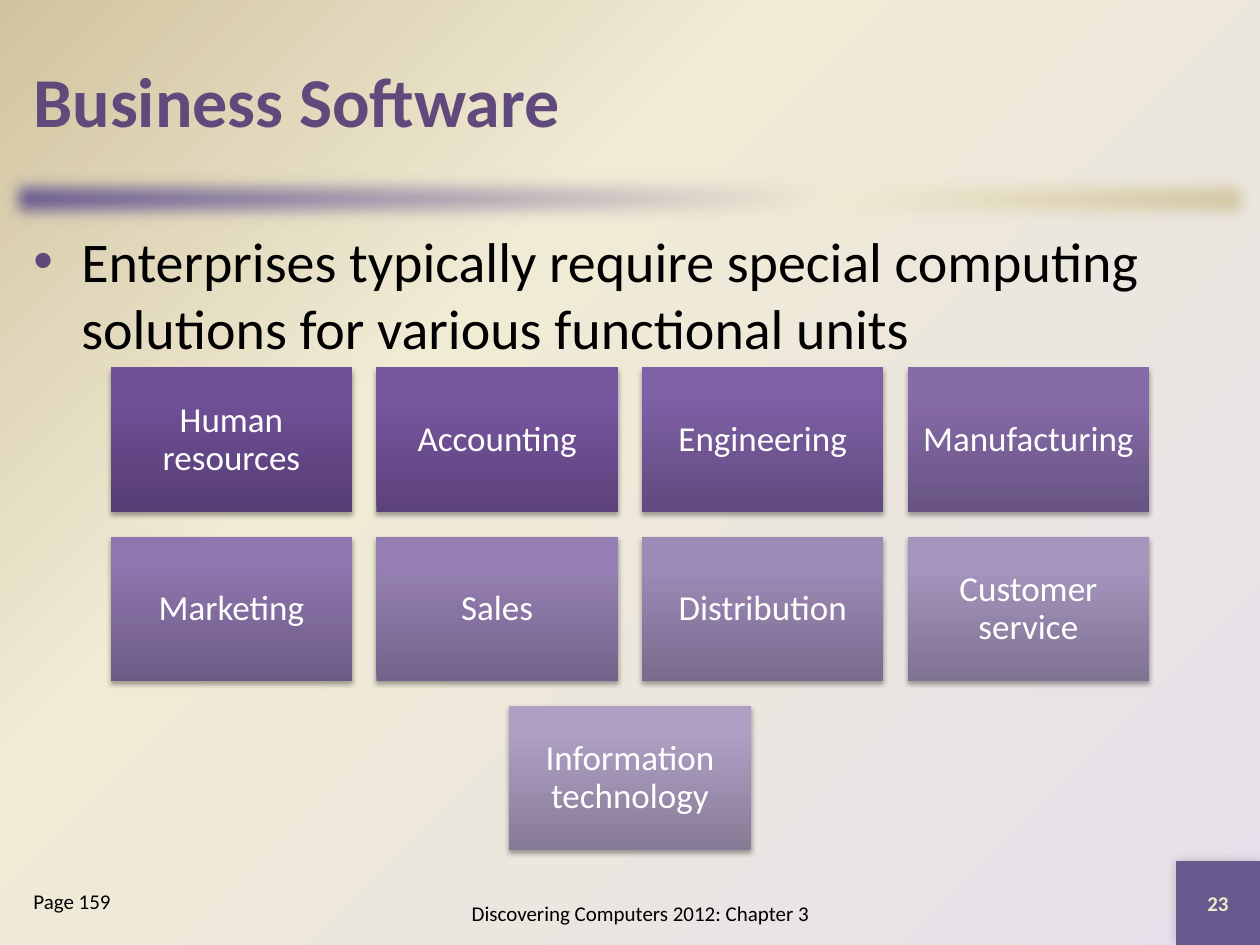
from dataclasses import dataclass

from lxml import etree
from pptx import Presentation
from pptx.dml.color import RGBColor
from pptx.enum.shapes import MSO_SHAPE as Shape
from pptx.enum.text import MSO_ANCHOR as Anchor, PP_ALIGN as Align
from pptx.oxml import parse_xml
from pptx.oxml.ns import nsdecls, qn
from pptx.util import Emu, Inches, Pt

COLS = 60  # the slide is 60 columns by 45 rows of square cells
SLIDE_W, SLIDE_H = Inches(10), Inches(7.5)
CELL = SLIDE_W / COLS

BLACK, WHITE = RGBColor(0x00, 0x00, 0x00), RGBColor(0xFF, 0xFF, 0xFF)
PURPLE, VIOLET = RGBColor(0x60, 0x4A, 0x7B), RGBColor(0x67, 0x58, 0x8E)
LILAC, CREAM = RGBColor(0xE6, 0xE0, 0xEC), RGBColor(0xF0, 0xEB, 0xD5)
TAN, PALE_YELLOW = RGBColor(0xD1, 0xC3, 0x9F), RGBColor(0xEE, 0xEB, 0xCA)


@dataclass(frozen=True)
class Area:
    """A rectangle in grid cells."""
    col: float
    row: float
    cols: float
    rows: float

    def emu(self) -> list[Emu]:
        return [Emu(round(n * CELL)) for n in (self.col, self.row, self.cols, self.rows)]


@dataclass(frozen=True)
class Style:
    size: int
    color: RGBColor = BLACK
    bold: bool = False
    align: Align = Align.LEFT
    anchor: Anchor = Anchor.TOP
    line_spacing: float = 1.0


@dataclass(frozen=True)
class Unit:
    """A functional unit with its gradient from bottom to top."""
    name: str
    bottom: RGBColor
    middle: RGBColor
    top: RGBColor


def unit(name: str, *colors: str) -> Unit:
    return Unit(name, *map(RGBColor.from_string, colors))


UNITS = [
    unit("Human resources", "563D74", "705097", "704F99"),
    unit("Accounting", "5C427B", "7756A0", "7755A2"),
    unit("Engineering", "614A7F", "7E60A5", "7F60A7"),
    unit("Manufacturing", "675383", "866BA9", "876BAB"),
    unit("Marketing", "6D5B86", "8E76AE", "8E75B0"),
    unit("Sales", "73638A", "9680B3", "9680B5"),
    unit("Distribution", "796B8E", "9E8BB8", "9E8BBA"),
    unit("Customer service", "7F7392", "A695BD", "A695BF"),
    unit("Information technology", "867B96", "AE9FC3", "AE9FC4"),
]
PER_ROW, BOX_W, BOX_H, GAP, BOX_TOP = 4, 11.5, 6.9, 1.15, 17.5

TITLE = Style(40, PURPLE, bold=True, anchor=Anchor.MIDDLE)
BODY = Style(32)
FOOTER = Style(12, align=Align.CENTER, anchor=Anchor.MIDDLE)
PAGE_REF = Style(12)
NUMBER = Style(12, PALE_YELLOW, True, Align.CENTER, Anchor.MIDDLE)
LABEL = Style(20, WHITE, False, Align.CENTER, Anchor.MIDDLE, 0.9)

LINEAR = '<a:lin ang="{}" scaled="0"/>'
FROM_CORNER = '<a:path path="circle"><a:fillToRect l="100000" t="100000"/></a:path>'


def set_gradient(fill_el, stops: dict[int, RGBColor], direction: str) -> None:
    """Replace a fill element by a gradient; stops are keyed by percent."""
    gs = "".join(f'<a:gs pos="{pos * 1000}"><a:srgbClr val="{color}"/></a:gs>'
                 for pos, color in stops.items())
    xml = (f'<a:gradFill {nsdecls("a")} rotWithShape="1"><a:gsLst>{gs}</a:gsLst>'
           f'{direction}</a:gradFill>')
    fill_el.getparent().replace(fill_el, parse_xml(xml))


def add_effect(sp, tag: str, **attrs: int) -> etree._Element:
    effects = sp._element.spPr.find(qn("a:effectLst"))
    return etree.SubElement(effects, qn(tag), {k: str(v) for k, v in attrs.items()})


def add_shadow(sp, alpha: int, blur: float, dist: float, angle: int) -> None:
    shadow = add_effect(sp, "a:outerShdw", blurRad=Pt(blur), dist=Pt(dist),
                        dir=angle * 60000, rotWithShape=0)
    color = etree.SubElement(shadow, qn("a:srgbClr"), val=str(BLACK))
    etree.SubElement(color, qn("a:alpha"), val=str(alpha * 1000))


def add_rect(s, area: Area):
    sp = s.shapes.add_shape(Shape.RECTANGLE, *area.emu())
    sp.shadow.inherit = False
    sp.line.fill.background()
    sp.fill.background()
    return sp


def gradient_rect(s, area: Area, stops: dict[int, RGBColor], angle: int):
    sp = add_rect(s, area)
    no_fill = sp._element.spPr.find(qn("a:noFill"))
    set_gradient(no_fill, stops, LINEAR.format(angle * 60000))
    return sp


def write(sp, text: str, style: Style):
    tf = sp.text_frame
    tf.word_wrap = True
    tf.vertical_anchor = style.anchor
    p = tf.paragraphs[0]
    p.alignment, p.line_spacing = style.align, style.line_spacing
    r = p.add_run()
    r.text = text
    font = {"name": "Calibri", "size": Pt(style.size), "bold": style.bold}
    for key, value in font.items():
        setattr(r.font, key, value)
    r.font.color.rgb = style.color
    return p


def add_text(s, area: Area, text: str, style: Style):
    return write(s.shapes.add_textbox(*area.emu()), text, style)


def add_bullet(p, color: RGBColor) -> None:
    pPr = p._p.get_or_add_pPr()
    indent = Inches(0.38)
    pPr.set("marL", str(indent))
    pPr.set("indent", str(-indent))
    bullet_color = etree.SubElement(pPr, qn("a:buClr"))
    etree.SubElement(bullet_color, qn("a:srgbClr"), val=str(color))
    etree.SubElement(pPr, qn("a:buFont"), typeface="Arial")
    etree.SubElement(pPr, qn("a:buChar"), char="•")


def add_units(s) -> None:
    """Lay the units out in rows, each row centred on the slide."""
    for i, u in enumerate(UNITS):
        row, col = divmod(i, PER_ROW)
        count = min(PER_ROW, len(UNITS) - row * PER_ROW)
        left = (COLS - count * BOX_W - (count - 1) * GAP) / 2
        area = Area(left + col * (BOX_W + GAP), BOX_TOP + row * (BOX_H + GAP), BOX_W, BOX_H)
        sp = gradient_rect(s, area, {0: u.bottom, 80: u.middle, 100: u.top}, 270)
        add_shadow(sp, alpha=35, blur=3.1, dist=1.8, angle=90)
        for side in ("left", "top", "right", "bottom"):
            setattr(sp.text_frame, f"margin_{side}", Inches(0.08))
        write(sp, u.name, LABEL)


def main() -> None:
    prs = Presentation()
    prs.slide_width, prs.slide_height = SLIDE_W, SLIDE_H
    s = prs.slides.add_slide(prs.slide_layouts[6])

    s.background.fill.solid()
    bg_fill = s._element.find(f".//{qn('p:bgPr')}/{qn('a:solidFill')}")
    set_gradient(bg_fill, {0: LILAC, 65: CREAM, 100: TAN}, FROM_CORNER)

    bar = gradient_rect(s, Area(0, 8, COLS, 3), {0: VIOLET, 65: CREAM, 100: TAN}, 45)
    add_effect(bar, "a:softEdge", rad=Pt(10))

    corner = add_rect(s, Area(56, 41, 4, 4))
    corner.fill.solid()
    corner.fill.fore_color.rgb = VIOLET
    add_shadow(corner, alpha=20, blur=6, dist=0, angle=225)
    write(corner, "23", NUMBER)

    add_text(s, Area(1, 1, 58, 7.5), "Business Software", TITLE)
    body = add_text(s, Area(1, 10.5, 58, 30.5), "Enterprises typically require special "
                    "computing solutions for various functional units", BODY)
    add_bullet(body, PURPLE)
    add_text(s, Area(18, 42, 25, 3), "Discovering Computers 2012: Chapter 3", FOOTER)
    add_text(s, Area(1, 42, 11, 3), "Page 159", PAGE_REF)
    add_units(s)
    prs.save("out.pptx")


if __name__ == "__main__":
    main()
